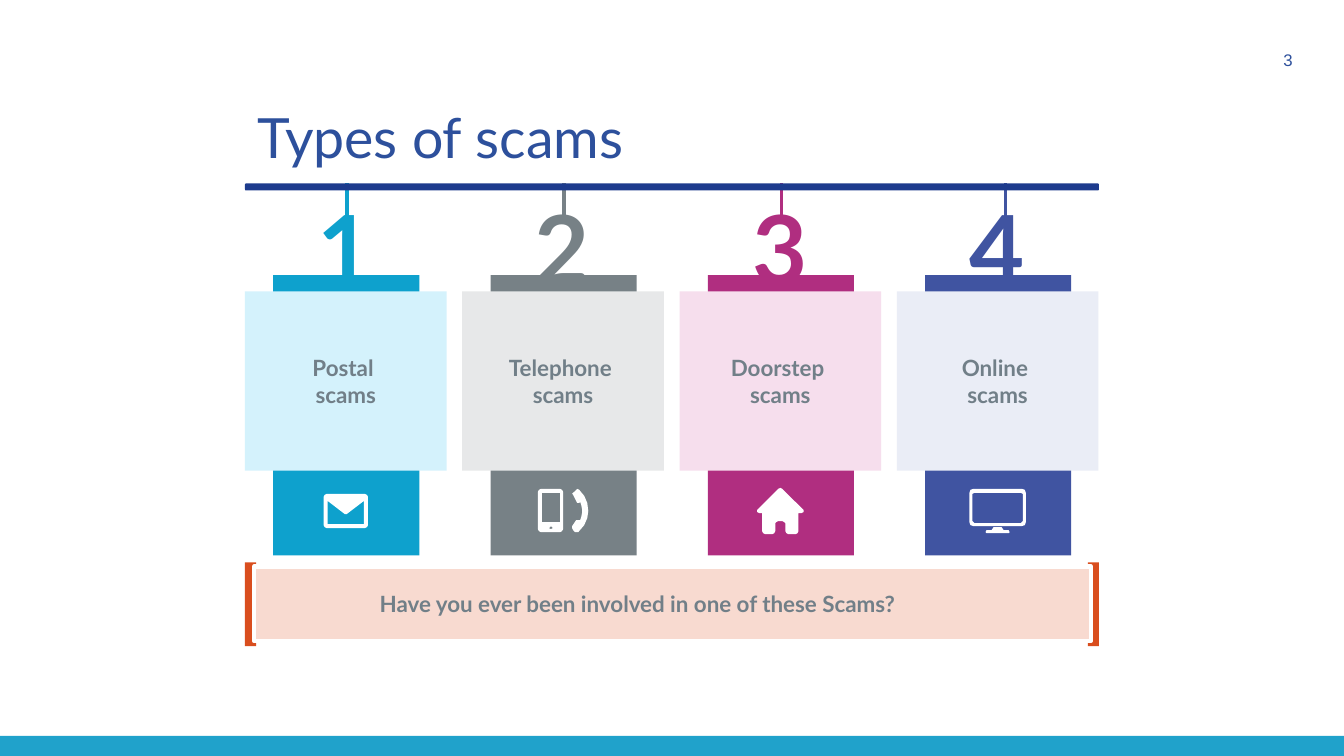
"""Build the slide on the four types of scams."""
import pptx
import pptx.util
import pptx.dml.color
import pptx.enum.shapes
import pptx.enum.text
import pptx.oxml

Inches, Pt = pptx.util.Inches, pptx.util.Pt
hex_color = pptx.dml.color.RGBColor.from_string
SHAPE = pptx.enum.shapes.MSO_SHAPE
ALIGN = pptx.enum.text.PP_ALIGN
ANCHOR = pptx.enum.text.MSO_ANCHOR


def add_block(left, top, width, height, fill, kind=SHAPE.RECTANGLE):
    sp = s.shapes.add_shape(kind, Inches(left), Inches(top), Inches(width), Inches(height))
    sp.shadow.inherit = False
    sp.fill.solid()
    sp.fill.fore_color.rgb = hex_color(fill)
    sp.line.fill.background()
    return sp


def write(sp, text, color, font, frame, para):
    tf = sp.text_frame
    tf.text = text
    p = tf.paragraphs[0]
    settings = {"name": "Lato", "bold": False, **font}
    for target, values in ((tf, frame), (p, para), (p.runs[0].font, settings)):
        for name, value in values.items():
            setattr(target, name, value)
    for r in p.runs:
        for name, value in settings.items():
            setattr(r.font, name, value)
        r.font.color.rgb = hex_color(color)


prs = pptx.Presentation()
prs.slide_width, prs.slide_height = Inches(13.33), Inches(7.5)
s = prs.slides.add_slide(prs.slide_layouts[5])

LEFT, WIDTH, PITCH, CARD = 2.43, 8.47, 2.155, 2.0
BAR_TOP, TAB_TOP, CARD_TOP, ICON_TOP = 1.82, 2.73, 2.89, 4.84
NO_INSET = dict.fromkeys(("margin_left", "margin_top", "margin_right", "margin_bottom"), 0)
MIDDLE = {"vertical_anchor": ANCHOR.MIDDLE, "word_wrap": True}
BODY = {"size": Pt(16), "bold": True}

title = s.shapes.title
title.left, title.top, title.width, title.height = map(Inches, (2.45, 1.19, WIDTH, 0.4))
write(title, "Types of scams", "2D509C", {"size": Pt(39.6)},
      {**MIDDLE, "auto_size": pptx.enum.text.MSO_AUTO_SIZE.NONE},
      {"alignment": ALIGN.LEFT, "line_spacing": 0.9})

page = s.shapes.add_textbox(Inches(12.34), Inches(0.39), Inches(0.48), Inches(0.3))
write(page, "3", "2D509C", {"name": "Arial", "size": Pt(12)},
      {**NO_INSET, "vertical_anchor": ANCHOR.BOTTOM, "word_wrap": True},
      {"alignment": ALIGN.RIGHT})

envelope = [
    [(-19, 6), (19, 6), (21, 7), (22, 9), (22, 37), (21, 39), (19, 40),
     (-19, 40), (-21, 39), (-22, 37), (-22, 9), (-21, 7)],
    [(1, 26), (18, 13), (18, 36), (-18, 36), (-18, 13), (-1, 26)],
]
phone = [
    [(-22, 1), (-3, 1), (-1, 2), (0, 4), (0, 41), (-1, 43), (-3, 44),
     (-22, 44), (-24, 43), (-25, 41), (-25, 4), (-24, 2)],
    [(-21, 5), (-3, 5), (-3, 34), (-21, 34)],
    [(-14, 39.5), (-12, 38), (-10, 39.5), (-12, 41)],
    [(13, 2), (11, 4), (9, 6), (10, 7), (13, 13), (14, 15), (16, 15), (17, 14),
     (18, 17), (19, 22), (19, 24), (18, 29), (17, 32), (15, 32), (13, 32),
     (9, 38), (9, 40), (10, 42), (12, 44), (15, 44), (21, 37), (24, 30),
     (25, 23), (24, 15), (21, 8), (16, 2), (14, 1)],
]
house = [
    [(0, 0), (-2, 1), (-23, 22), (-23, 24), (-21, 25), (-18, 25), (-18, 43),
     (-17, 45), (-15, 46), (-8, 46), (-6, 45), (-5, 43), (-5, 35), (-4, 33.5),
     (-2, 33), (2, 33), (4, 33.5), (5, 35), (5, 43), (6, 45), (8, 46), (15, 46),
     (17, 45), (18, 43), (18, 25), (21, 25), (23, 24), (23, 22), (2, 1)],
]
screen = [
    [(-24, 1), (24, 1), (27, 2), (28, 5), (28, 34), (27, 37), (24, 38),
     (-24, 38), (-27, 37), (-28, 34), (-28, 5), (-27, 2)],
    [(-23, 5), (23, 5), (25, 6), (25, 33), (23, 35), (-23, 35), (-25, 33), (-25, 6)],
    [(-4, 39), (4, 39), (6, 42), (11, 42), (12, 44), (11, 45), (-11, 45),
     (-12, 44), (-11, 42), (-6, 42)],
]

scams = [
    ("Postal", "0EA1CD", "D4F2FC", 1.01, envelope),
    ("Telephone", "778186", "E7E8E9", 1.01, phone),
    ("Doorstep", "B02E80", "F6DEED", 1.01, house),
    ("Online", "4054A1", "EAEDF6", 1.08, screen),
]
for i, (name, dark, pale, stem, icon) in enumerate(scams):
    x = LEFT + i * PITCH
    add_block(x + 0.28, TAB_TOP, 1.45, 2.78, dark)
    card = add_block(x, CARD_TOP, CARD, 1.78, pale)
    write(card, f"{name} \vscams", "717F88", BODY,
          {**MIDDLE, "margin_top": Inches(0.06), "margin_bottom": Inches(0.06)},
          {"alignment": ALIGN.CENTER, "space_before": Pt(2.2), "space_after": Pt(2.2)})

    line = s.shapes.add_connector(pptx.enum.shapes.MSO_CONNECTOR.STRAIGHT, Inches(x + stem),
                                  Inches(2.14), Inches(x + stem), Inches(BAR_TOP))
    line.line.color.rgb = hex_color(dark)
    line.line.width = Pt(2.5)
    line._element.spPr.append(pptx.oxml.parse_xml(
        '<a:effectLst xmlns:a="http://schemas.openxmlformats.org/drawingml/2006/main"/>'))

    number = s.shapes.add_textbox(Inches(x + 0.72), Inches(1.87), Inches(0.53), Inches(1.14))
    write(number, str(i + 1), dark, {"size": Pt(68), "bold": True},
          {**NO_INSET, "vertical_anchor": ANCHOR.MIDDLE, "word_wrap": False}, {})

    outline = s.shapes.build_freeform(*icon[0][0], scale=Inches(0.01))
    for j, contour in enumerate(icon):
        if j:
            outline.move_to(*contour[0])
        outline.add_line_segments(contour[1:], close=True)
    drawn = outline.convert_to_shape(Inches(x + CARD / 2), Inches(ICON_TOP))
    drawn.shadow.inherit = False
    drawn.fill.solid()
    drawn.fill.fore_color.rgb = hex_color("FFFFFF")
    drawn.line.fill.background()

bar = add_block(LEFT, BAR_TOP, WIDTH, 0.07, "1D3B8D", SHAPE.ROUNDED_RECTANGLE)
bar.adjustments[0] = 0.17

for x in (LEFT, LEFT + WIDTH - 0.11):
    add_block(x, 5.58, 0.11, 0.83, "D94E1E")
question = add_block(2.52, 5.62, 8.3, 0.74, "F8DAD0")
question.line.color.rgb = hex_color("FFFFFF")
question.line.width = Pt(3)
write(question, "Have you ever been involved in one of these Scams?", "717F88", BODY,
      {**MIDDLE, "margin_right": Inches(0.79)},
      {"alignment": ALIGN.CENTER, "space_before": Pt(3.3), "space_after": Pt(3.3)})

add_block(0, 7.3, 13.33, 0.2, "20A2CB")
prs.save("out.pptx")
